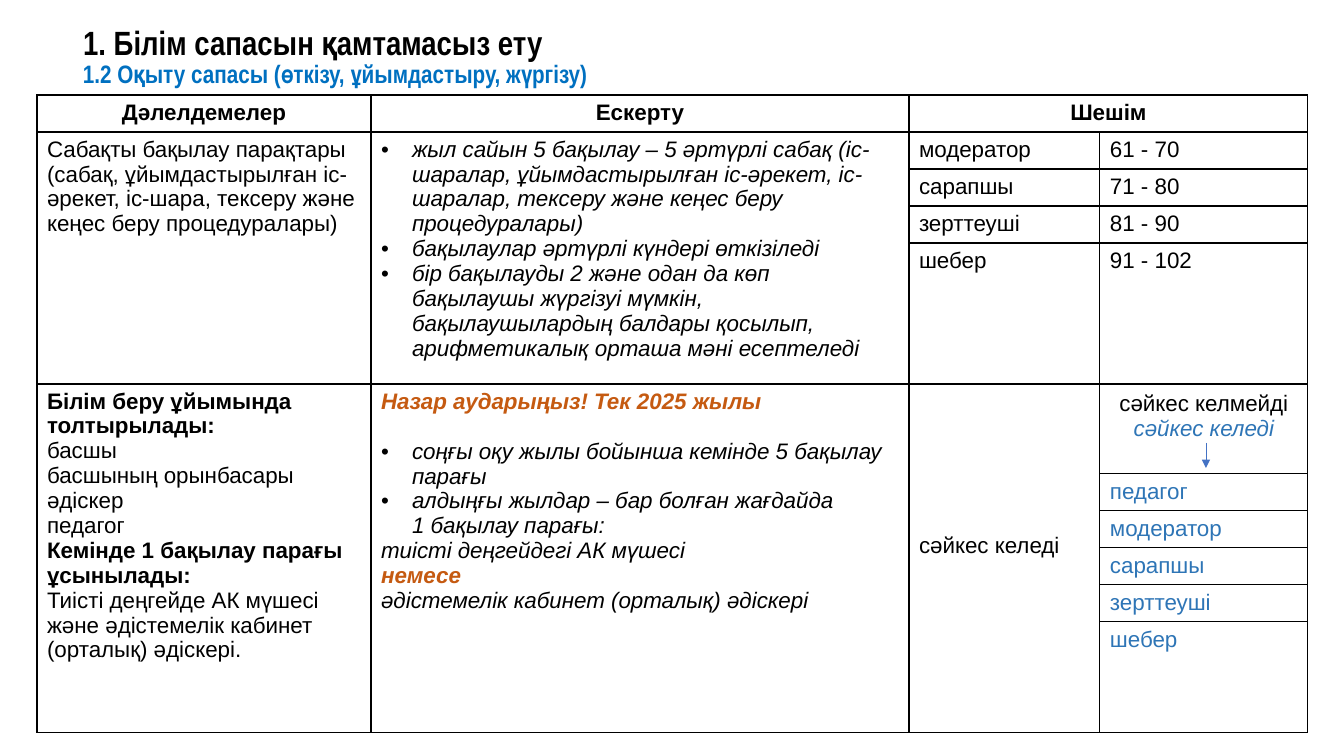
import pptx
import pptx.util
import pptx.dml.color
import pptx.enum.text
import pptx.enum.shapes
import pptx.oxml.ns
import lxml.etree

TITLE = "1. Білім сапасын қамтамасыз ету"
TOPIC = "1.2 Оқыту сапасы (өткізу, ұйымдастыру, жүргізу)"

COLORS = {"black": "000000", "topic": "0070C0", "alert": "C55A11",
          "level": "2E75B6", "arrow": "4472C4"}

HEAD = {"bold": True, "align": "CENTER"}
BOLD = {"bold": True}
NOTE = {"italic": True}
ITEM = {"italic": True, "bullet": True}
ALERT = {"italic": True, "bold": True, "color": "alert"}
LEVEL = {"italic": False, "color": "level"}

WIDTHS = [334, 538, 191, 208]
HEIGHTS = [37, 37, 37, 37, 141, 90, 37, 37, 37, 37, 111]
LEFT, TOP = 37, 95

# first row, first column, last row, last column
MERGES = [(0, 2, 0, 3), (1, 0, 4, 0), (1, 1, 4, 1),
          (5, 0, 10, 0), (5, 1, 10, 1), (5, 2, 10, 2)]

SCORES = [("модератор", "61 - 70"), ("сарапшы", "71 - 80"),
          ("зерттеуші", "81 - 90"), ("шебер", "91 - 102")]
LEVELS = ["педагог", "модератор", "сарапшы", "зерттеуші", "шебер"]

# (row, column): paragraphs of text and format
CELLS = {
    (0, 0): [("Дәлелдемелер", HEAD)],
    (0, 1): [("Ескерту", HEAD)],
    (0, 2): [("Шешім", HEAD)],
    (1, 0): [("Сабақты бақылау парақтары\n(сабақ, ұйымдастырылған іс-әрекет, "
              "іс-шара, тексеру және кеңес беру процедуралары)", {})],
    (1, 1): [
        ("жыл сайын 5 бақылау – 5 әртүрлі сабақ (іс-шаралар, ұйымдастырылған "
         "іс-әрекет, іс-шаралар, тексеру және кеңес беру процедуралары)", ITEM),
        ("бақылаулар әртүрлі күндері өткізіледі", ITEM),
        ("бір бақылауды 2 және одан да көп бақылаушы жүргізуі мүмкін, "
         "бақылаушылардың балдары қосылып, арифметикалық орташа мәні "
         "есептеледі", ITEM)],
    (5, 0): [
        ("Білім беру ұйымында толтырылады:", BOLD),
        ("басшы", {}),
        ("басшының орынбасары", {}),
        ("әдіскер", {}),
        ("педагог", {}),
        ("Кемінде 1 бақылау парағы ұсынылады:", BOLD),
        ("Тиісті деңгейде АК мүшесі және әдістемелік кабинет (орталық) "
         "әдіскері.", {})],
    (5, 1): [
        ("Назар аударыңыз! Тек 2025 жылы", {**ALERT, "after": 18}),
        ("соңғы оқу жылы бойынша кемінде 5 бақылау парағы", ITEM),
        ("алдыңғы жылдар – бар болған жағдайда\n1 бақылау парағы:", ITEM),
        ("тиісті деңгейдегі АК мүшесі", NOTE),
        ("немесе", ALERT),
        ("әдістемелік кабинет (орталық) әдіскері", NOTE)],
    (5, 2): [("сәйкес келеді", {})],
    (5, 3): [("сәйкес келмейді", {"align": "CENTER"}),
             ("сәйкес келеді", {**LEVEL, "italic": True, "align": "CENTER"})],
}
for row, pair in enumerate(SCORES, 1):
    for col, word in enumerate(pair, 2):
        CELLS[row, col] = [(word, {})]
for row, word in enumerate(LEVELS, 6):
    CELLS[row, 3] = [(word, LEVEL)]


def px(n):
    return pptx.util.Emu(round(n * 914400 / 100.8))


def rgb(name):
    return pptx.dml.color.RGBColor.from_string(COLORS[name])


def node(parent, tag, **attrs):
    """Append a drawing element to its parent."""
    return lxml.etree.SubElement(parent, pptx.oxml.ns.qn("a:" + tag), attrs)


def write(para, text, size=16, face="Arial", color="black", bold=False,
          italic=False, align="LEFT", bullet=False, after=0):
    para.alignment = getattr(pptx.enum.text.PP_ALIGN, align)
    para.space_after = pptx.util.Pt(after)
    if bullet:
        props = para._p.get_or_add_pPr()
        props.set("marL", str(px(31)))
        props.set("indent", str(px(-31)))
        node(props, "buFont", typeface="Arial")
        node(props, "buChar", char="•")
    for i, line in enumerate(text.split("\n")):
        if i:
            para.add_line_break()
            node(para._p[-1], "rPr", sz=str(size * 100))
        run = para.add_run()
        run.text = line
        font = run.font
        font.size, font.name = pptx.util.Pt(size), face
        font.bold, font.italic = bold, italic
        font.color.rgb = rgb(color)


def border(cell):
    cell.fill.background()
    props = cell._tc.get_or_add_tcPr()
    for i, side in enumerate(("lnL", "lnR", "lnT", "lnB")):
        line = node(props, side, w="12700")
        node(node(line, "solidFill"), "srgbClr", val=COLORS["black"])
        props.insert(i, line)


def heading(slide):
    title = slide.shapes.title
    title.left, title.top, title.width, title.height = map(px, (73, 15, 1159, 59))
    frame = title.text_frame
    frame.auto_size = pptx.enum.text.MSO_AUTO_SIZE.NONE
    frame.vertical_anchor = pptx.enum.text.MSO_ANCHOR.MIDDLE
    frame.paragraphs[0].line_spacing = 0.9
    write(frame.paragraphs[0], TITLE, size=24, face="Arial Narrow", bold=True)
    frame = slide.shapes.add_textbox(*map(px, (73, 53, 814, 40))).text_frame
    frame.word_wrap = True
    write(frame.paragraphs[0], TOPIC, size=18, face="Arial Narrow",
          color="topic", bold=True)


def grid(slide):
    table = slide.shapes.add_table(
        len(HEIGHTS), len(WIDTHS), px(LEFT), px(TOP),
        px(sum(WIDTHS)), px(sum(HEIGHTS))).table
    table.first_row = table.horz_banding = False
    for col, width in zip(table.columns, WIDTHS):
        col.width = px(width)
    for row, height in zip(table.rows, HEIGHTS):
        row.height = px(height)
    for cell in table.iter_cells():
        border(cell)
    for r1, c1, r2, c2 in MERGES:
        table.cell(r1, c1).merge(table.cell(r2, c2))
    for spot, paras in CELLS.items():
        frame = table.cell(*spot).text_frame
        for i, (text, form) in enumerate(paras):
            para = frame.add_paragraph() if i else frame.paragraphs[0]
            write(para, text, **form)
    for col in (2, 3):
        table.cell(5, col).vertical_anchor = pptx.enum.text.MSO_ANCHOR.MIDDLE
    table.cell(1, 1).margin_right = px(20)
    table.cell(5, 2).margin_bottom = px(30)
    table.cell(5, 3).margin_bottom = px(31)  # room for the arrow


def arrow(slide):
    x = LEFT + sum(WIDTHS) - WIDTHS[-1] // 2 + 2
    end = TOP + sum(HEIGHTS[:6]) - 6
    line = slide.shapes.add_connector(
        pptx.enum.shapes.MSO_CONNECTOR.STRAIGHT,
        px(x), px(end - 25), px(x), px(end))
    line.line.color.rgb = rgb("arrow")
    line.line.width = pptx.util.Pt(0.5)
    node(line.line._get_or_add_ln(), "tailEnd", type="triangle")
    node(line._element.spPr, "effectLst")


def main():
    deck = pptx.Presentation()
    deck.slide_width, deck.slide_height = px(1344), px(756)
    slide = deck.slides.add_slide(deck.slide_layouts[5])
    heading(slide)
    grid(slide)
    arrow(slide)
    deck.save("out.pptx")


if __name__ == "__main__":
    main()
